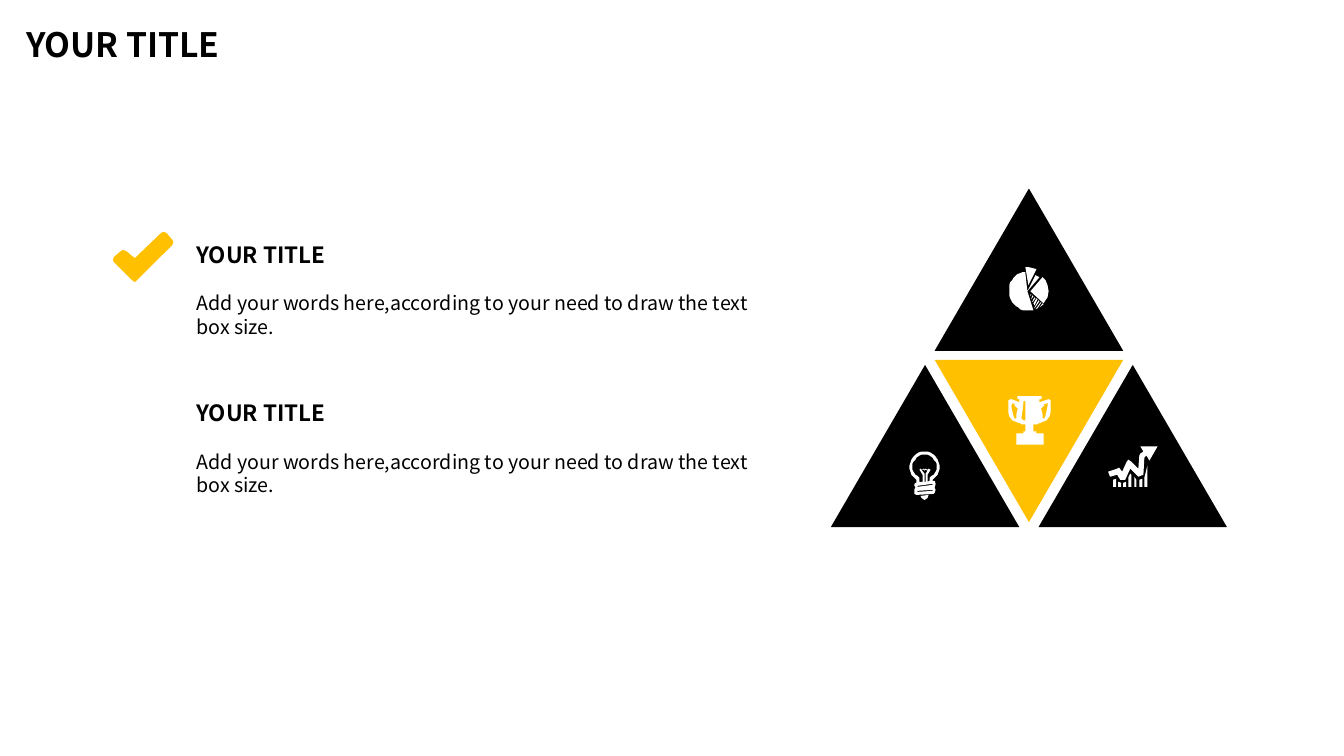
from math import cos, radians, sin

from pptx import Presentation
from pptx.dml.color import RGBColor
from pptx.enum.shapes import MSO_SHAPE
from pptx.enum.text import MSO_AUTO_SIZE, PP_ALIGN
from pptx.util import Inches, Pt

TRIANGLE = MSO_SHAPE.ISOSCELES_TRIANGLE
GROW = MSO_AUTO_SIZE.SHAPE_TO_FIT_TEXT
LEFT = PP_ALIGN.LEFT

FONT = "Noto Sans CJK JP"
COLORS = {"ink": "000000", "accent": "FFC000", "icon": "FFFFFF"}
ICON_UNIT = Inches(0.01)  # icon outlines are in hundredths of an inch

HEADING = "YOUR TITLE"
BODY = "Add your words here,according to your need to draw the text box size."


def arc(cx, cy, radius, start, end, steps=24):
    """Points along a circle, angles in degrees, clockwise from the right."""
    angles = [radians(start + (end - start) * i / steps) for i in range(steps + 1)]
    return [(round(cx + radius * cos(a), 2), round(cy + radius * sin(a), 2))
            for a in angles]


def bar(left, right, top_left, top_right, bottom):
    return [(left, top_left), (right, top_right), (right, bottom), (left, bottom)]


TROPHY = [
    # cup, handles and foot
    [(11, 3), (11, 6), (3, 3), (0, 4), (0, 10), (0.3, 16), (1, 20), (4, 24),
     (9, 26), (11, 27), (11, 26), (13, 27.5), (17, 28), (17, 35), (15, 35),
     (15, 37), (8, 37), (8, 48), (35, 48), (35, 37), (28, 37), (28, 35),
     (25, 35), (25, 28), (29, 27.5), (31, 26), (31, 27), (33, 26), (38, 24),
     (41, 20), (42, 16), (42.5, 10), (42, 4), (40, 3), (31, 6), (31, 3),
     (33, 3), (33, 0), (9, 0), (9, 3)],
    # openings
    [(34, 22), (34, 18), (32, 10), (33, 12), (36, 9), (35, 8), (39, 7),
     (39, 10), (38.5, 15), (37, 19), (35.5, 21.5)],
    [(10, 10), (8, 18), (8, 22), (6.5, 21.5), (5, 19), (3.5, 15), (3, 10),
     (4, 7), (7, 8), (6, 9), (9, 12)],
    [(17, 5), (17, 24), (15, 23.5), (13, 22), (13.5, 16), (15, 7), (15, 5)],
]
PIE = [
    [(27, 8), (19, 24), (17, 6)] + arc(20, 23.8, 19.5, 260, 75)
    + [(19, 24), (31, 10)],
    [(17, 0), (20, 0), (24, 0.7), (28, 2), (20, 18)],
    [(34, 10), (37, 13), (39.2, 18), (40, 24), (39, 30), (35, 36), (22, 24)],
    # hatched slice
    [(35, 37), (31, 40), (34, 36)],
    [(29, 41), (33, 35), (32, 35), (27, 42)],
    [(26, 41), (31, 34), (30, 33), (26, 40)],
    [(26, 38), (29, 32), (28, 31), (25, 36)],
    [(24, 35), (27, 31), (26, 30), (24, 34)],
    [(23, 32), (25, 29), (24, 28), (23, 31)],
    [(22, 29), (23, 27), (22, 27)],
]
GROWTH = [
    # arrow
    [(49, 0), (41, 14), (38, 9), (36, 11), (35, 28), (30, 30), (22, 22),
     (17, 33), (12, 33), (9, 28), (2, 30), (0, 25), (9, 22), (11, 21),
     (14, 25), (18, 16), (20, 13), (23, 15), (30, 22), (31, 9), (32, 7),
     (35, 5), (32, 0)],
    # bars
    bar(5, 8, 33, 32, 40), bar(10, 13, 35, 36, 40), bar(15, 18, 36, 35, 40),
    [(20, 31), (22, 27), (23, 28), (23, 40), (20, 40)],
    bar(26, 28, 30, 33, 40), bar(31, 34, 33, 32, 40), bar(36, 39, 31, 19, 40),
]
BULB = [
    # glass and socket
    arc(15, 15, 15, 122, 418)
    + [(23, 29), (25, 29), (26, 32), (25, 36), (26, 38), (25, 41), (24, 42),
       (7, 43), (5, 42), (5, 37), (5.5, 36.5), (5, 34), (5, 32), (6, 31), (7, 31)],
    # inside of the glass, around the filament
    arc(15, 15, 12, 115, 425)
    + [(20, 29), (18, 30), (18, 23), (21, 18), (19, 17), (18, 18), (16, 17),
       (15, 18), (14, 17), (12, 18), (11, 17), (10, 18), (13, 23), (13, 30), (10, 30)],
    [(18, 19), (16, 18.5), (15, 19), (14, 18.5), (12, 18.5), (15, 22), (15, 30),
     (16, 30), (16, 22)],
    # contact and grooves
    [(19, 43), (11, 44), (12, 46), (15, 47.5), (18, 46)],
    [(23, 38), (8, 39), (8, 40), (23, 39)],
    [(23, 32), (8, 34), (8, 35), (23, 33)],
]
CHECK = [[(59, 13), (60.5, 10.5), (59, 8), (53, 1), (50.5, 0), (48, 1), (24, 24),
          (21.5, 25.5), (19, 24), (13, 19), (10.5, 17.5), (8, 19), (1, 25),
          (0, 27.5), (1, 30), (19, 48), (21.5, 49.5), (24, 48)]]


def paint(shape, color):
    shape.shadow.inherit = False
    shape.fill.solid()
    shape.fill.fore_color.rgb = RGBColor.from_string(COLORS[color])
    shape.line.fill.background()


def add_text(slide, text, left, top, width, height, size=14, bold=False, wrap=True):
    box = slide.shapes.add_textbox(*map(Inches, (left, top, width, height)))
    frame = box.text_frame
    frame.word_wrap = wrap
    frame.auto_size = GROW
    paragraph = frame.paragraphs[0]
    paragraph.alignment = LEFT
    run = paragraph.add_run()
    run.text = text
    run.font.name = FONT
    run.font.size = Pt(size)
    run.font.bold = bold
    run.font.color.rgb = RGBColor.from_string(COLORS["ink"])


def add_icon(slide, outlines, left, top, color="icon"):
    first, *others = outlines
    builder = slide.shapes.build_freeform(*first[0], scale=ICON_UNIT)
    builder.add_line_segments(first[1:], close=True)
    for outline in others:
        builder.move_to(*outline[0])
        builder.add_line_segments(outline[1:], close=True)
    paint(builder.convert_to_shape(Inches(left), Inches(top)), color)


def add_pyramid(slide, left, top):
    """Four triangles, the middle one upside down, each with its icon."""
    width, height, step = 1.87, 1.61, 1.03
    # column, drop, turn, colour, icon, icon offset in the triangle
    tiles = [
        (1, 1.70, 180, "accent", TROPHY, (0.73, 0.36)),
        (1, 0, 0, "ink", PIE, (0.73, 0.78)),
        (2, 1.75, 0, "ink", GROWTH, (0.69, 0.81)),
        (0, 1.75, 0, "ink", BULB, (0.78, 0.86)),
    ]
    for column, drop, turn, color, icon, (dx, dy) in tiles:
        x, y = left + column * step, top + drop
        tile = slide.shapes.add_shape(
            TRIANGLE, *map(Inches, (x, y, width, height)))
        tile.rotation = turn
        paint(tile, color)
        add_icon(slide, icon, x + dx, y + dy)


def add_points(slide, left, top):
    """Check mark and two headed paragraphs."""
    text_left = left + 0.73
    add_icon(slide, CHECK, left, top, color="accent")
    for row in range(2):
        y = top + 0.04 + row * 1.57
        add_text(slide, HEADING, text_left, y, 1.51, 0.37,
                 size=16, bold=True, wrap=False)
        add_text(slide, BODY, text_left, y + 0.5, 5.8, 0.57)


def main():
    deck = Presentation()
    deck.slide_width, deck.slide_height = Inches(13.33), Inches(7.5)
    slide = deck.slides.add_slide(deck.slide_layouts[6])
    add_text(slide, HEADING, 0.16, 0.19, 2.35, 0.5, size=24, bold=True)
    add_pyramid(slide, 8.24, 1.87)
    add_points(slide, 1.12, 2.3)
    deck.save("out.pptx")


if __name__ == "__main__":
    main()
